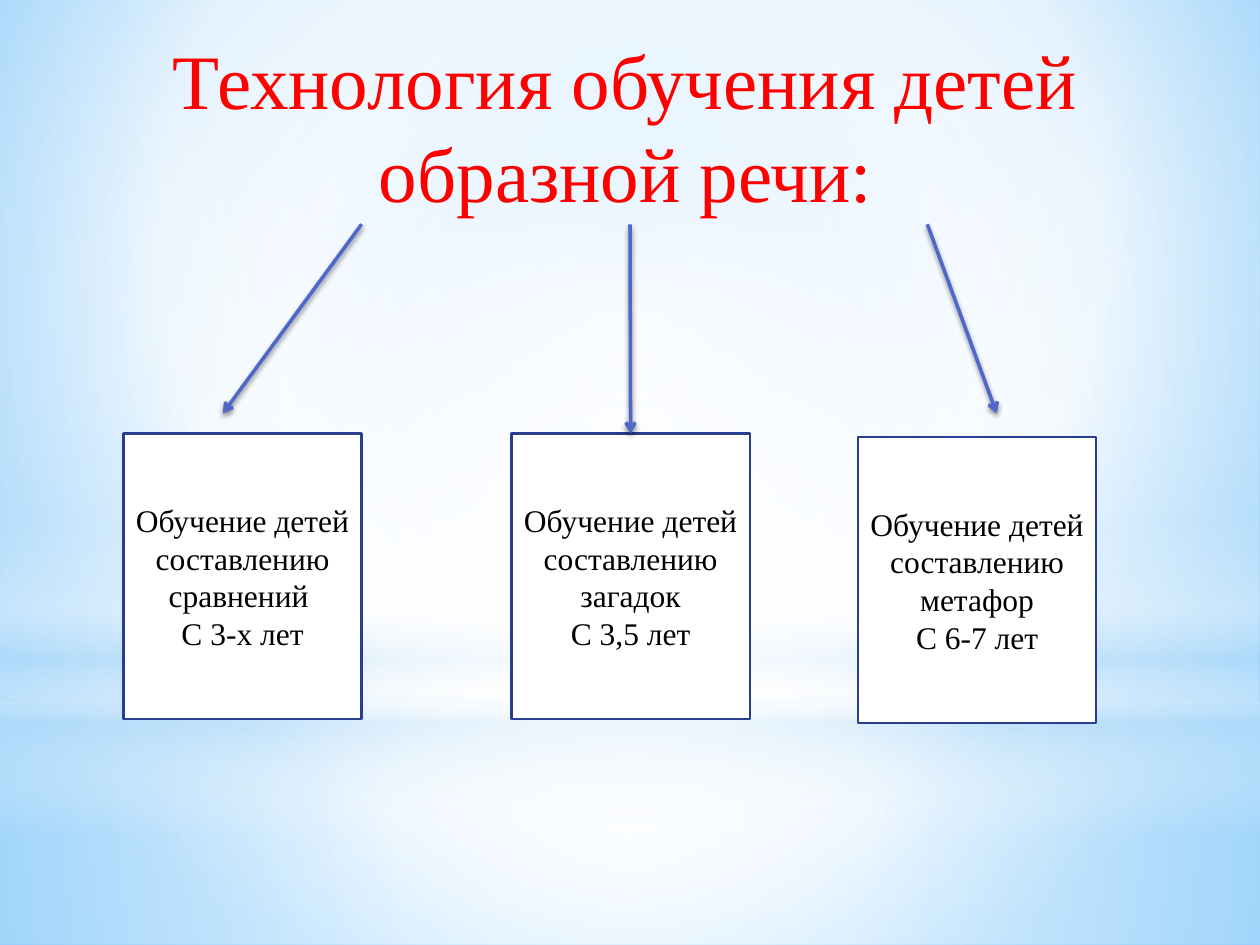
from lxml.etree import SubElement
from pptx import Presentation
from pptx.dml.color import RGBColor
from pptx.enum.shapes import MSO_CONNECTOR, MSO_SHAPE
from pptx.enum.text import MSO_ANCHOR, MSO_AUTO_SIZE, PP_ALIGN
from pptx.oxml import parse_xml
from pptx.oxml.ns import nsdecls, qn
from pptx.util import Inches, Pt

FONT = "Times New Roman"
WHITE, SKY = "FFFFFF", "B4DCFA"
CENTRE = (50, 50, 50, 50)
BOX_WIDTH, BOX_HEIGHT = 1.89, 2.27
ARROW_TOP = 1.78

# Layers of light: shape, top, height, stops (position, colour, opacity), focus
LIGHT_LAYERS = [
    (MSO_SHAPE.RECTANGLE, 5.58, 1.92,
     [(0, WHITE, 91), (37, WHITE, 76), (100, SKY, 79)], CENTRE),
    (MSO_SHAPE.RECTANGLE, 0, 5.58,
     [(0, WHITE, 89), (48, WHITE, 62), (100, SKY, 79)], CENTRE),
    (MSO_SHAPE.RECTANGLE, 4.12, 2.5,
     [(0, WHITE, 0), (29, WHITE, 30), (45, SKY, 40),
      (55, WHITE, 26), (65, SKY, 60), (100, WHITE, 0)], None),
    (MSO_SHAPE.OVAL, 1.75, 5.58, [(0, WHITE, 100), (56, WHITE, 0)], CENTRE),
]

# Branches: box left and top, lines, arrow start x, arrow tip (None: joined to box)
BRANCHES = [
    (0.98, 3.44, ["Обучение детей составлению сравнений ", "С 3-х лет"],
     2.87, (1.77, 3.28)),
    (4.06, 3.44, ["Обучение детей составлению загадок", "С 3,5 лет"],
     5, None),
    (6.81, 3.47, ["Обучение детей составлению метафор", "С 6-7 лет"],
     7.36, (7.91, 3.28)),
]


def colour(value):
    return RGBColor.from_string(value)


def set_gradient(fill, element, stops, focus):
    """Fill with a radial gradient around focus, or downwards without one."""
    fill.gradient()
    gradient = next(element.iter(qn("a:gradFill")))
    stop_xml = "".join(
        f'<a:gs pos="{position * 1000}"><a:srgbClr val="{value}">'
        f'<a:alpha val="{opacity * 1000}"/></a:srgbClr></a:gs>'
        for position, value, opacity in stops)
    if focus:
        sides = " ".join(f'{side}="{share * 1000}"' for side, share in zip("ltrb", focus))
        direction = f'<a:path path="circle"><a:fillToRect {sides}/></a:path>'
    else:
        direction = '<a:lin ang="5400000" scaled="0"/>'
    gradient.getparent().replace(gradient, parse_xml(
        f'<a:gradFill {nsdecls("a")} rotWithShape="1">'
        f'<a:gsLst>{stop_xml}</a:gsLst>{direction}</a:gradFill>'))


def format_text(text_frame, size, value):
    text_frame.word_wrap = True
    for paragraph in text_frame.paragraphs:
        paragraph.alignment = PP_ALIGN.CENTER
        for run in paragraph.runs:
            run.font.name = FONT
            run.font.size = Pt(size)
            run.font.color.rgb = colour(value)


def add_backdrop(slide, width):
    set_gradient(slide.background.fill, slide.element,
                 [(0, "9ED5FF", 100), (60, WHITE, 100), (100, "5BB9FF", 100)],
                 (20, 10, 20, 60))
    for kind, top, height, stops, focus in LIGHT_LAYERS:
        shape = slide.shapes.add_shape(kind, 0, Inches(top), width, Inches(height))
        shape.shadow.inherit = False
        shape.line.fill.background()
        set_gradient(shape.fill, shape.element, stops, focus)


def add_title(slide, left, top, width, height, text):
    title = slide.shapes.title
    title.left, title.top = Inches(left), Inches(top)
    title.width, title.height = Inches(width), Inches(height)
    text_frame = title.text_frame
    text_frame.text = text
    text_frame.auto_size = MSO_AUTO_SIZE.NONE
    text_frame.vertical_anchor = MSO_ANCHOR.TOP
    format_text(text_frame, 44, "FF0000")
    # Bring the title in front of the backdrop
    title.element.getparent().append(title.element)


def add_box(slide, left, top, lines):
    box = slide.shapes.add_shape(MSO_SHAPE.RECTANGLE, Inches(left), Inches(top),
                                 Inches(BOX_WIDTH), Inches(BOX_HEIGHT))
    box.shadow.inherit = False
    box.fill.solid()
    box.fill.fore_color.rgb = colour(WHITE)
    box.line.color.rgb = colour("2A3E8E")
    box.line.width = Pt(1.25)
    box.text_frame.text = "\n".join(lines)
    box.text_frame.vertical_anchor = MSO_ANCHOR.MIDDLE
    format_text(box.text_frame, 18, "000000")
    return box


def add_arrow(slide, start, tip, box):
    end_x, end_y = tip or (start, ARROW_TOP)
    arrow = slide.shapes.add_connector(MSO_CONNECTOR.STRAIGHT, Inches(start),
                                       Inches(ARROW_TOP), Inches(end_x), Inches(end_y))
    if tip is None:
        arrow.end_connect(box, 0)
    arrow.line.color.rgb = colour("4E67C8")
    arrow.line.width = Pt(2)
    SubElement(arrow.line._get_or_add_ln(), qn("a:tailEnd"), type="arrow")
    # Soft shadow just below the line
    arrow.element.spPr.append(parse_xml(
        f'<a:effectLst {nsdecls("a")}><a:outerShdw blurRad="{Pt(3.1)}" dist="{Pt(1.8)}" '
        'dir="5400000" rotWithShape="0"><a:srgbClr val="000000"><a:alpha val="45000"/>'
        '</a:srgbClr></a:outerShdw></a:effectLst>'))


def main():
    presentation = Presentation()
    presentation.slide_width, presentation.slide_height = Inches(10), Inches(7.5)
    slide = presentation.slides.add_slide(presentation.slide_layouts[5])
    add_backdrop(slide, presentation.slide_width)
    add_title(slide, 0.2, 0.21, 9.53, 7.01, "Технология обучения детей образной речи:")
    for left, top, lines, start, tip in BRANCHES:
        box = add_box(slide, left, top, lines)
        add_arrow(slide, start, tip, box)
    presentation.save("out.pptx")


if __name__ == "__main__":
    main()
